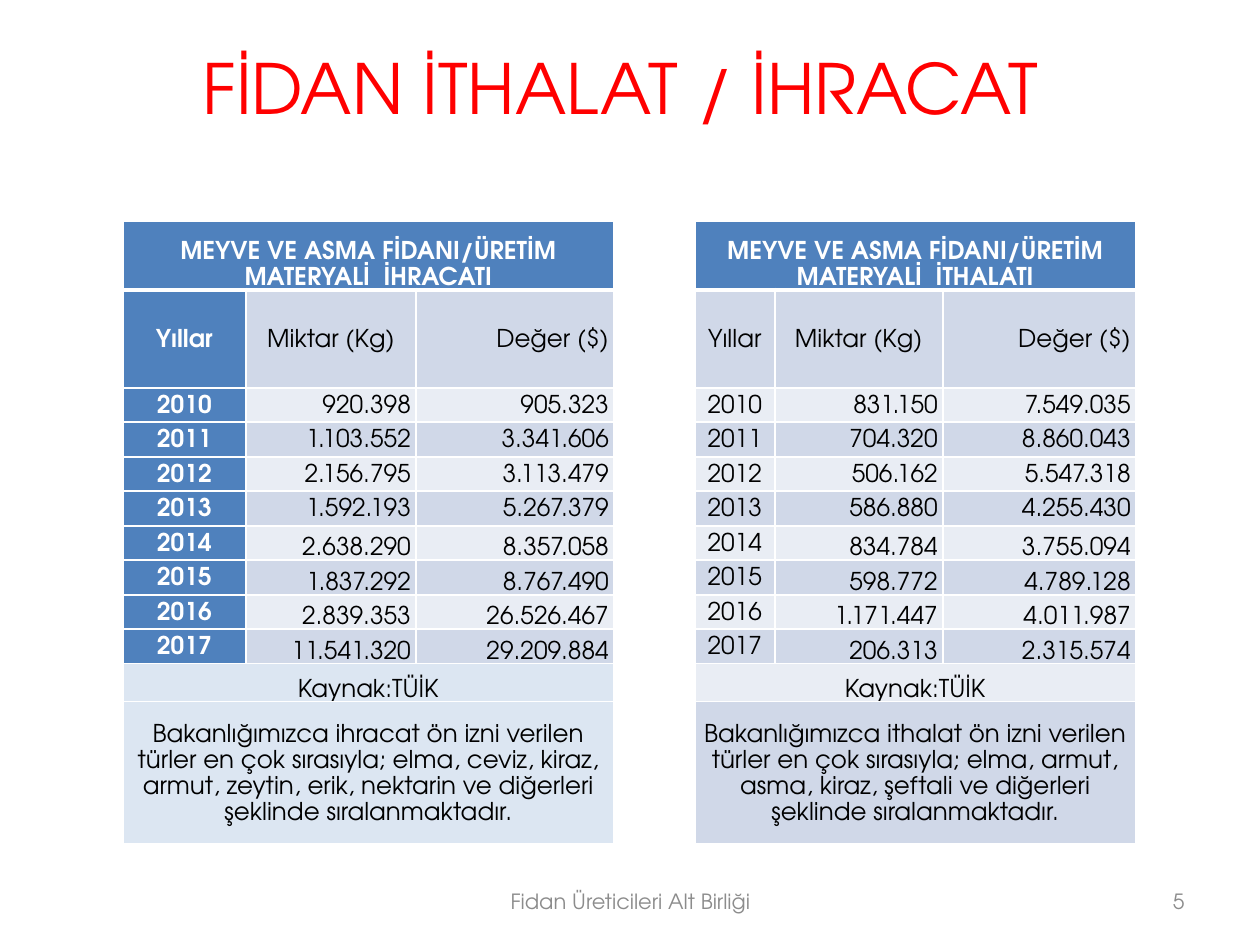
import lxml.etree
import pptx
import pptx.dml.color
import pptx.enum.text
import pptx.oxml.ns
import pptx.util

PX = 914400 // 126
FONT = "TeX Gyre Adventor"
COLORS = {
    "title": "FF0000",
    "footer": "8C8C8C",
    "text": "000000",
    "white": "FFFFFF",
    "header": "4F81BD",
    "dark_band": "D0D8E8",
    "light_band": "E9EDF4",
    "export_note": "DCE6F2",
}
ALIGN = pptx.enum.text.PP_ALIGN
ANCHOR = pptx.enum.text.MSO_ANCHOR

COLUMNS = [123, 170, 198, 81, 80, 168, 193]
ROWS = [69, 98] + [34, 35] * 4 + [38, 142]
YEARS = range(2010, 2018)
FIRST_BOTTOM_YEAR = 2014
LABELS = ["Yıllar", "Miktar (Kg)", "Değer ($)"]
SOURCE = "Kaynak:TÜİK"

EXPORTS = {
    "column": 0,
    "title": "MEYVE VE ASMA FİDANI/ÜRETİM MATERYALİ  İHRACATI",
    "values": [
        ("920.398", "905.323"),
        ("1.103.552", "3.341.606"),
        ("2.156.795", "3.113.479"),
        ("1.592.193", "5.267.379"),
        ("2.638.290", "8.357.058"),
        ("1.837.292", "8.767.490"),
        ("2.839.353", "26.526.467"),
        ("11.541.320", "29.209.884"),
    ],
    "note": "Bakanlığımızca ihracat ön izni verilen türler en çok sırasıyla; "
            "elma, ceviz, kiraz, armut, zeytin, erik, nektarin ve diğerleri "
            "şeklinde sıralanmaktadır.",
    "year_fill": "header",
    "source_fill": "export_note",
    "note_fill": "export_note",
}
IMPORTS = {
    "column": 4,
    "title": "MEYVE VE ASMA FİDANI/ÜRETİM MATERYALİ  İTHALATI",
    "values": [
        ("831.150", "7.549.035"),
        ("704.320", "8.860.043"),
        ("506.162", "5.547.318"),
        ("586.880", "4.255.430"),
        ("834.784", "3.755.094"),
        ("598.772", "4.789.128"),
        ("1.171.447", "4.011.987"),
        ("206.313", "2.315.574"),
    ],
    "note": "Bakanlığımızca ithalat ön izni verilen türler en çok sırasıyla; "
            "elma, armut, asma, kiraz, şeftali ve diğerleri "
            "şeklinde sıralanmaktadır.",
    "year_fill": None,
    "source_fill": "light_band",
    "note_fill": "dark_band",
}


def rgb(name):
    return pptx.dml.color.RGBColor.from_string(COLORS[name])


def write(tf, text, size, color, align, bold=False):
    p = tf.paragraphs[0]
    p.text = text
    p.alignment = align
    font = p.runs[0].font
    font.name = FONT
    font.size = pptx.util.Pt(size)
    font.bold = bold
    font.color.rgb = rgb(color)
    return p


def add_text(s, box, text, size, color, align):
    tf = s.shapes.add_textbox(*(v * PX for v in box)).text_frame
    tf.word_wrap = True
    tf.vertical_anchor = ANCHOR.MIDDLE
    write(tf, text, size, color, align)


def add_borders(cell, bottom):
    qn = pptx.oxml.ns.qn
    tcPr = cell._tc.get_or_add_tcPr()
    for i, (side, width) in enumerate(zip("LRTB", (1, 1, 1, bottom))):
        ln = lxml.etree.Element(qn(f"a:ln{side}"), w=str(pptx.util.Pt(width)))
        fill = lxml.etree.SubElement(ln, qn("a:solidFill"))
        lxml.etree.SubElement(fill, qn("a:srgbClr"), val=COLORS["white"])
        tcPr.insert(i, ln)


def prepare_cell(cell, bottom):
    cell.margin_left = cell.margin_right = 5 * PX
    cell.margin_top = cell.margin_bottom = 0
    cell.fill.background()
    add_borders(cell, bottom)
    p = cell.text_frame.paragraphs[0]
    lxml.etree.SubElement(p._p, pptx.oxml.ns.qn("a:endParaRPr"), sz="1400")


def fill_cell(cell, text, fill, align=ALIGN.CENTER, anchor=ANCHOR.MIDDLE):
    cell.fill.solid()
    cell.fill.fore_color.rgb = rgb(fill)
    cell.vertical_anchor = anchor
    strong = fill == "header"
    p = write(cell.text_frame, text, 14, "white" if strong else "text", align, strong)
    p.line_spacing = 1.15


def fill_group(table, group):
    first = group["column"]
    last_row = len(ROWS) - 1
    merged = [
        (0, group["title"], "header", ANCHOR.BOTTOM),
        (last_row - 1, SOURCE, group["source_fill"], ANCHOR.BOTTOM),
        (last_row, group["note"], group["note_fill"], ANCHOR.MIDDLE),
    ]
    for row, text, fill, anchor in merged:
        cell = table.cell(row, first)
        cell.merge(table.cell(row, first + 2))
        fill_cell(cell, text, fill, anchor=anchor)

    for i, label in enumerate(LABELS):
        fill = (group["year_fill"] if i == 0 else None) or "dark_band"
        align = ALIGN.RIGHT if i == 2 else ALIGN.CENTER
        fill_cell(table.cell(1, first + i), label, fill, align)

    for row, (year, values) in enumerate(zip(YEARS, group["values"]), 2):
        band = "dark_band" if row % 2 else "light_band"
        anchor = ANCHOR.MIDDLE if year < FIRST_BOTTOM_YEAR else ANCHOR.BOTTOM
        fill_cell(table.cell(row, first), str(year), group["year_fill"] or band)
        for i, value in enumerate(values, 1):
            fill_cell(table.cell(row, first + i), value, band, ALIGN.RIGHT, anchor)


def add_trade_table(s, left, top):
    frame = s.shapes.add_table(len(ROWS), len(COLUMNS), left * PX, top * PX,
                               sum(COLUMNS) * PX, sum(ROWS) * PX)
    table = frame.table
    for column, width in zip(table.columns, COLUMNS):
        column.width = width * PX
    for i, (row, height) in enumerate(zip(table.rows, ROWS)):
        row.height = height * PX
        for cell in row.cells:
            prepare_cell(cell, 3 if i == 0 else 1)
    for group in (EXPORTS, IMPORTS):
        fill_group(table, group)


def add_footer(s, left, top, width, height):
    add_text(s, (left + 368, top, 399, height),
             "Fidan Üreticileri Alt Birliği", 12, "footer", ALIGN.CENTER)
    add_text(s, (left + width - 294, top, 294, height), "5", 12, "footer", ALIGN.RIGHT)


def main():
    prs = pptx.Presentation()
    prs.slide_width = pptx.util.Inches(10)
    prs.slide_height = pptx.util.Inches(7.5)
    s = prs.slides.add_slide(prs.slide_layouts[6])
    add_text(s, (63, 38, 1134, 97), "FİDAN İTHALAT / İHRACAT ", 39.6, "title", ALIGN.CENTER)
    add_footer(s, 63, 876, 1134, 50)
    add_trade_table(s, 123, 221)
    prs.save("out.pptx")


if __name__ == "__main__":
    main()
